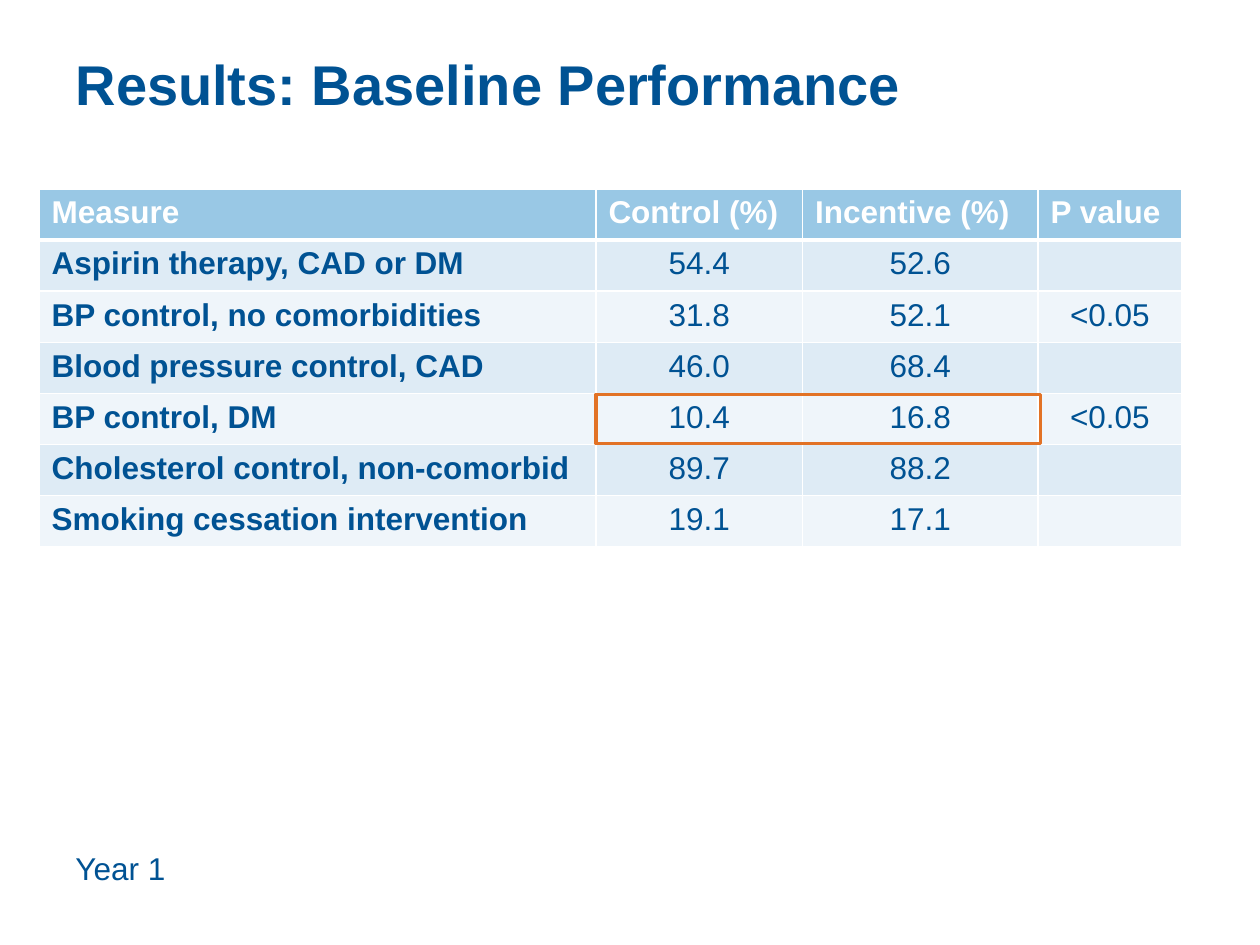
"""Build the baseline performance results slide."""
from dataclasses import dataclass
from typing import NamedTuple

from lxml import etree
from pptx import Presentation
from pptx.dml.color import RGBColor
from pptx.enum import shapes, text
from pptx.oxml import ns
from pptx.util import Inches, Pt


@dataclass(frozen=True)
class Theme:
    """Colours, font and type sizes of the slide."""

    font: str = "Arial"
    navy: str = "005293"
    white: str = "FFFFFF"
    header: str = "99C8E5"
    band_dark: str = "DEEBF5"
    band_light: str = "EFF5FA"
    accent: str = "E27225"
    title_size: int = 32
    body_size: int = 18


class Measure(NamedTuple):
    """One row of results."""

    name: str
    control: str
    incentive: str
    p_value: str = ""


class Box(NamedTuple):
    """Position and size in inches."""

    left: float
    top: float
    width: float
    height: float

    def lengths(self) -> list:
        """Return the four values as lengths."""
        return [Inches(value) for value in self]


THEME = Theme()
HEADINGS = Measure("Measure", "Control (%)", "Incentive (%)", "P value")
MEASURES = [
    Measure("Aspirin therapy, CAD or DM", "54.4", "52.6"),
    Measure("BP control, no comorbidities", "31.8", "52.1", "<0.05"),
    Measure("Blood pressure control, CAD", "46.0", "68.4"),
    Measure("BP control, DM", "10.4", "16.8", "<0.05"),
    Measure("Cholesterol control, non-comorbid", "89.7", "88.2"),
    Measure("Smoking cessation intervention", "19.1", "17.1"),
]
COLUMN_WIDTHS = (4.42, 1.64, 1.87, 1.14)
TITLE_BOX = Box(0.5, -0.17, 9, 1.25)
TABLE_BOX = Box(0.31, 1.5, sum(COLUMN_WIDTHS), 2.84)
HIGHLIGHT_BOX = Box(4.73, 3.13, 3.53, 0.39)
CAPTION_BOX = Box(0.5, 6.69, 1.39, 0.4)


def format_text(paragraph, size: int, color: str, bold: bool) -> None:
    """Apply the theme font to every run of a paragraph."""
    for run in paragraph.runs:
        run.font.name = THEME.font
        run.font.size = Pt(size)
        run.font.bold = bold
        run.font.color.rgb = RGBColor.from_string(color)


def set_borders(cell, top: int = 1, bottom: int = 1) -> None:
    """Draw white borders with the given widths in points."""
    properties = cell._tc.get_or_add_tcPr()
    for side, width in (("L", 1), ("R", 1), ("T", top), ("B", bottom)):
        line = etree.SubElement(properties, ns.qn(f"a:ln{side}"), w=str(Pt(width)))
        fill = etree.SubElement(line, ns.qn("a:solidFill"))
        etree.SubElement(fill, ns.qn("a:srgbClr"), val=THEME.white)


def add_title(slide, title: str) -> None:
    """Fill and place the title placeholder."""
    shape = slide.shapes.title
    shape.left, shape.top, shape.width, shape.height = TITLE_BOX.lengths()
    frame = shape.text_frame
    frame.text = title
    frame.auto_size = text.MSO_AUTO_SIZE.NONE
    frame.vertical_anchor = text.MSO_ANCHOR.BOTTOM
    frame.margin_bottom = Inches(0.14)
    paragraph = frame.paragraphs[0]
    paragraph.alignment = text.PP_ALIGN.LEFT
    paragraph.line_spacing = 0.95
    format_text(paragraph, THEME.title_size, THEME.navy, True)


def add_results(slide, measures: list[Measure]) -> None:
    """Add the banded results table."""
    rows = [HEADINGS, *measures]
    table = slide.shapes.add_table(
        len(rows), len(COLUMN_WIDTHS), *TABLE_BOX.lengths()
    ).table
    for column, width in zip(table.columns, COLUMN_WIDTHS):
        column.width = Inches(width)
    for row_index, values in enumerate(rows):
        table.rows[row_index].height = Inches(TABLE_BOX.height / len(rows))
        is_header = row_index == 0
        band = THEME.band_dark if row_index % 2 else THEME.band_light
        for column_index, value in enumerate(values):
            cell = table.cell(row_index, column_index)
            set_borders(cell, 3 if row_index == 1 else 1, 3 if is_header else 1)
            cell.fill.solid()
            cell.fill.fore_color.rgb = RGBColor.from_string(
                THEME.header if is_header else band
            )
            cell.text_frame.text = value
            paragraph = cell.text_frame.paragraphs[0]
            is_label = is_header or column_index == 0
            paragraph.alignment = (
                text.PP_ALIGN.LEFT if is_label else text.PP_ALIGN.CENTER
            )
            color = THEME.white if is_header else THEME.navy
            format_text(paragraph, THEME.body_size, color, is_label)


def add_highlight(slide, box: Box) -> None:
    """Outline the highlighted pair of values."""
    shape = slide.shapes.add_shape(shapes.MSO_SHAPE.RECTANGLE, *box.lengths())
    shape.shadow.inherit = False
    shape.fill.background()
    shape.line.color.rgb = RGBColor.from_string(THEME.accent)
    shape.line.width = Pt(2)


def add_caption(slide, caption: str) -> None:
    """Add the caption at the foot of the slide."""
    frame = slide.shapes.add_textbox(*CAPTION_BOX.lengths()).text_frame
    frame.word_wrap = True
    frame.auto_size = text.MSO_AUTO_SIZE.SHAPE_TO_FIT_TEXT
    frame.text = caption
    format_text(frame.paragraphs[0], THEME.body_size, THEME.navy, False)


def main() -> None:
    """Build and save the presentation."""
    presentation = Presentation()
    presentation.slide_width = Inches(10)
    presentation.slide_height = Inches(7.5)
    slide = presentation.slides.add_slide(presentation.slide_layouts[5])
    add_title(slide, "Results: Baseline Performance")
    add_results(slide, MEASURES)
    add_highlight(slide, HIGHLIGHT_BOX)
    add_caption(slide, "Year 1")
    presentation.save("out.pptx")


if __name__ == "__main__":
    main()
